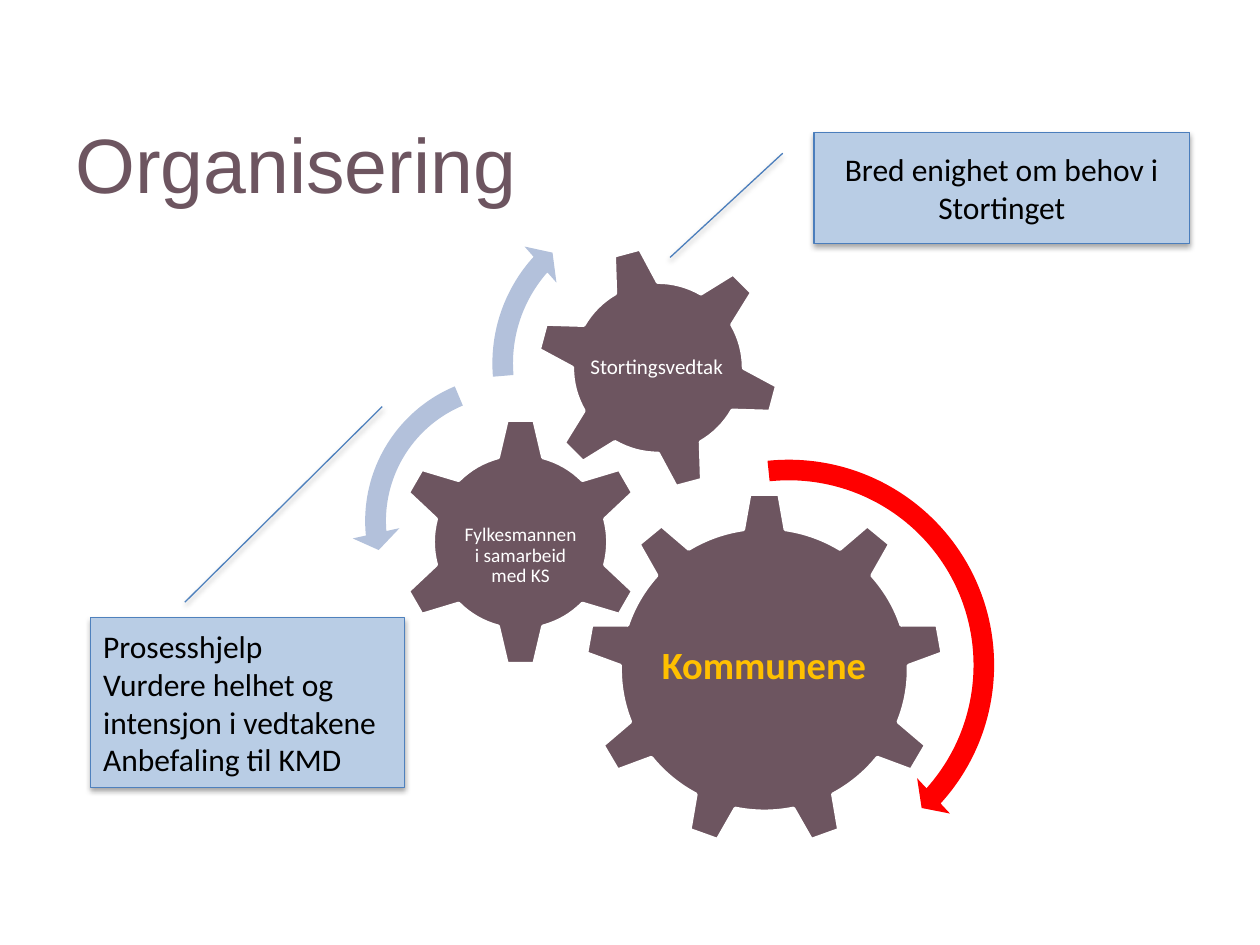
from lxml import etree
from pptx import Presentation
from pptx.dml.color import RGBColor
from pptx.enum.shapes import MSO_SHAPE
from pptx.enum.text import MSO_ANCHOR, PP_ALIGN
from pptx.oxml.ns import qn
from pptx.util import Cm, Pt

GEAR_6 = MSO_SHAPE.GEAR_6
GEAR_9 = MSO_SHAPE.GEAR_9
CIRCULAR_ARROW = MSO_SHAPE.CIRCULAR_ARROW
LEFT_CIRCULAR_ARROW = MSO_SHAPE.LEFT_CIRCULAR_ARROW
CALLOUT = MSO_SHAPE.LINE_CALLOUT_1
MIDDLE = MSO_ANCHOR.MIDDLE
LEFT = PP_ALIGN.LEFT
CENTER = PP_ALIGN.CENTER

PLUM = "6D5560"
PALE_BLUE = "B3C1DB"
CALLOUT_BLUE = "B9CDE5"
WHITE = "FFFFFF"
BLACK = "000000"


def color(value):
    return RGBColor.from_string(value)


def write_text(shape, text, size=18, font="Calibri", fill=BLACK, bold=False,
               align=CENTER, spacing=1.0, inset=None):
    frame = shape.text_frame
    frame.word_wrap = True
    frame.vertical_anchor = MIDDLE
    if inset is not None:
        frame.margin_left = frame.margin_right = Cm(inset)
        frame.margin_top = frame.margin_bottom = Cm(inset)
    frame.text = text
    for paragraph in frame.paragraphs:
        paragraph.alignment = align
        paragraph.line_spacing = spacing
        paragraph.font.size = Pt(size)
        paragraph.font.name = font
        paragraph.font.bold = bold
        paragraph.font.color.rgb = color(fill)


def add_label(slide, box, text, **text_format):
    shape = slide.shapes.add_textbox(*map(Cm, box))
    write_text(shape, text, **text_format)


def add_filled_shape(slide, kind, box, fill, line=None, width=0.75, adjustments=()):
    shape = slide.shapes.add_shape(kind, *map(Cm, box))
    shape.fill.solid()
    shape.fill.fore_color.rgb = color(fill)
    if line:
        shape.line.color.rgb = color(line)
        shape.line.width = Pt(width)
    else:
        shape.line.fill.background()
    shape.shadow.inherit = False
    for index, value in enumerate(adjustments):
        shape.adjustments[index] = value
    return shape


def add_gear(slide, kind, box, label_box, text, rotation=0, fill=WHITE, **text_format):
    gear = add_filled_shape(slide, kind, box, PLUM, line=WHITE, width=2)
    gear.rotation = rotation
    add_label(slide, label_box, text, fill=fill, spacing=0.9, inset=0.05, **text_format)


def add_shadow(shape):
    effects = shape._element.spPr.find(qn("a:effectLst"))
    shadow = etree.SubElement(effects, qn("a:outerShdw"), blurRad="40000",
                              dist="23000", dir="5400000", rotWithShape="0")
    shadow_color = etree.SubElement(shadow, qn("a:srgbClr"), val=BLACK)
    etree.SubElement(shadow_color, qn("a:alpha"), val="35000")


def add_callout(slide, box, text, line, align=CENTER, adjustments=()):
    callout = add_filled_shape(slide, CALLOUT, box, CALLOUT_BLUE, line=line,
                               adjustments=adjustments)
    add_shadow(callout)
    write_text(callout, text, align=align)


def main():
    presentation = Presentation()
    presentation.slide_width = Cm(25.4)
    presentation.slide_height = Cm(19.05)
    slide = presentation.slides.add_slide(presentation.slide_layouts[6])

    add_label(slide, (1.27, 2.16, 22.86, 2.24), "Organisering",
              size=44, font="Arial", fill=PLUM, align=LEFT)

    add_gear(slide, GEAR_9, (11.79, 9.93, 7.24, 7.14), (13.23, 11.61, 4.34, 3.68),
             "Kommunene", size=22, fill="FFC000", bold=True)
    add_gear(slide, GEAR_6, (7.98, 8.41, 5.03, 5.03), (9.25, 9.96, 2.49, 2.49),
             "Fylkesmannen i samarbeid med KS", size=11)
    add_gear(slide, GEAR_6, (10.8, 4.95, 4.93, 4.93), (11.74, 6.02, 3, 2.77),
             "Stortingsvedtak", rotation=345, size=12)

    add_filled_shape(slide, CIRCULAR_ARROW, (11.48, 8.99, 8.84, 8.84), "FF0000",
                     adjustments=(0.047, 2.99, 25.24, 158.45, 0.055))
    add_filled_shape(slide, LEFT_CIRCULAR_ARROW, (7.09, 7.29, 6.43, 6.43), PALE_BLUE,
                     adjustments=(0.065, 4.3, 104.89, 148.38, 0.075))
    add_filled_shape(slide, CIRCULAR_ARROW, (9.65, 3.86, 6.93, 6.93), PALE_BLUE,
                     adjustments=(0.06, 3.94, 133.14, 105.08, 0.07))

    add_callout(slide, (16.41, 2.67, 7.57, 2.24),
                "Bred enighet om behov i Stortinget", "4B7EBC")
    add_callout(slide, (1.83, 12.45, 6.32, 3.43),
                "Prosesshjelp\nVurdere helhet og intensjon i vedtakene\nAnbefaling til KMD",
                "4F81BD", align=LEFT, adjustments=(-0.09, 0.3, -1.24, 0.93))

    presentation.save("out.pptx")


if __name__ == "__main__":
    main()
